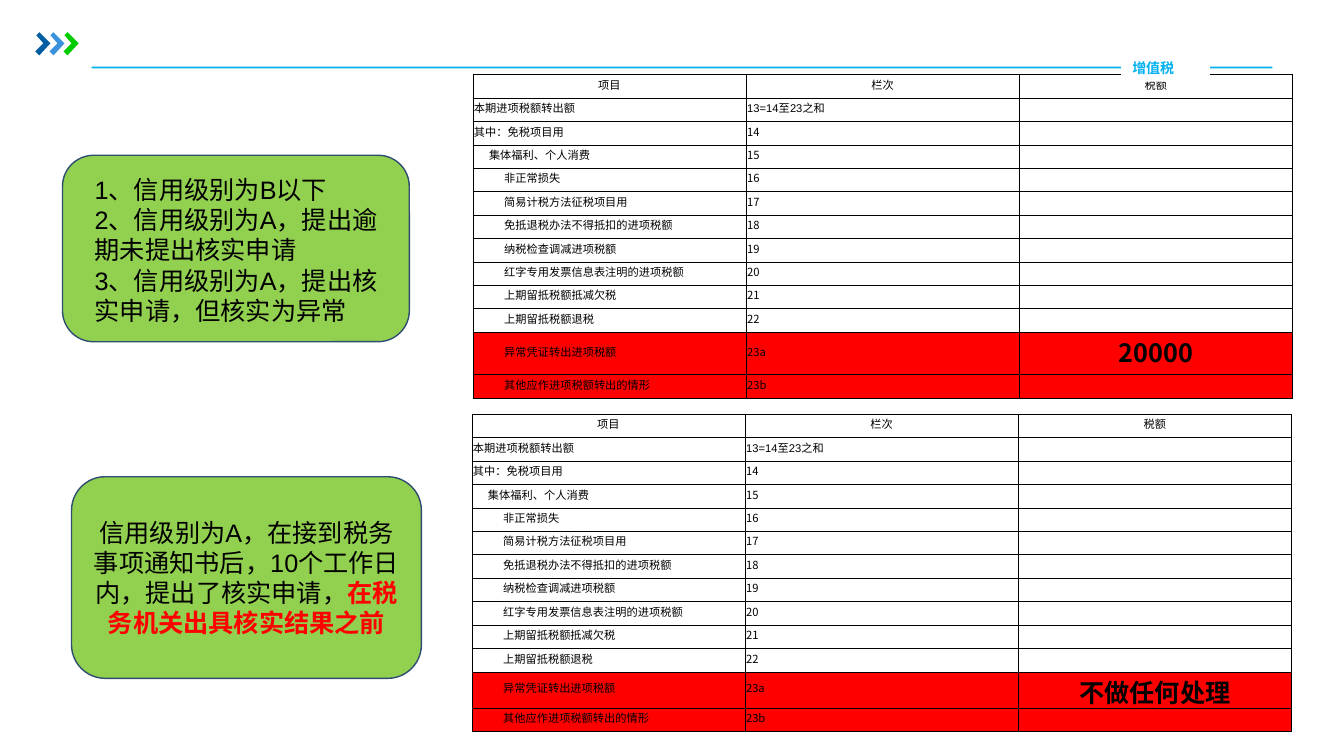
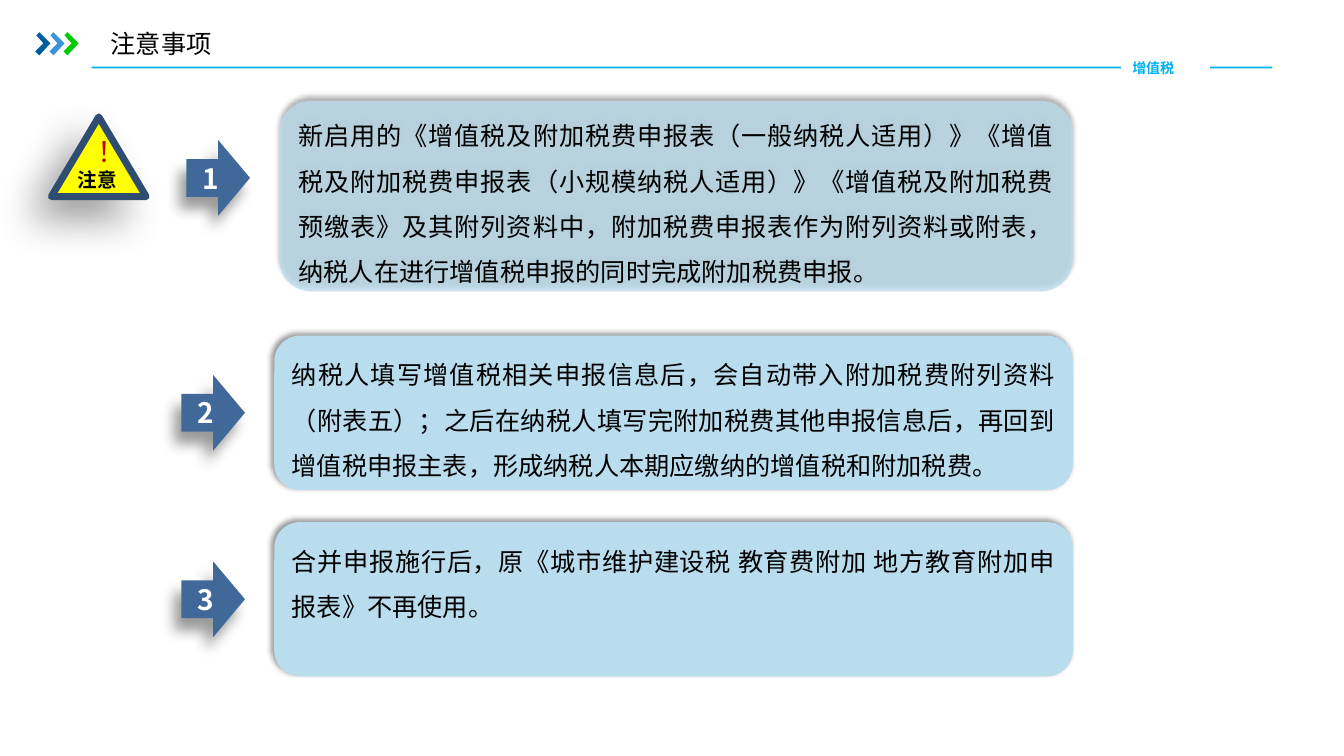
from lxml import etree
from pptx import Presentation
from pptx.dml.color import RGBColor
from pptx.enum import shapes, text
from pptx.oxml.ns import qn
from pptx.util import Inches, Pt

COLORS = {
    "black": "000000", "white": "FFFFFF", "red": "FF0000", "dark_red": "C00000",
    "yellow": "FFFF00", "green": "92D050", "outline": "2F4D70", "sky": "00B0F0",
    "arrow": "406898", "panel": "BADDEE",
    "chevron1": "005DA2", "chevron2": "3992DB", "chevron3": "00CC00",
}
SANS, LATIN, MARK = "Noto Sans CJK SC", "Arial", "Noto Sans CJK JP"
SHAPE = shapes.MSO_SHAPE
ALIGN = text.PP_ALIGN
MIDDLE = text.MSO_ANCHOR.MIDDLE

CHEVRON = [(0.01, 0.03), (0.04, 0), (0.15, 0.11), (0.04, 0.23), (0, 0.19), (0.08, 0.11)]
HEADINGS = ["项目", "栏次", "税额"]
ENTRIES = [
    (0, "本期进项税额转出额", "13=14至23之和"),
    (0, "其中：免税项目用", "14"),
    (1, "集体福利、个人消费", "15"),
    (2, "非正常损失", "16"),
    (2, "简易计税方法征税项目用", "17"),
    (2, "免抵退税办法不得抵扣的进项税额", "18"),
    (2, "纳税检查调减进项税额", "19"),
    (2, "红字专用发票信息表注明的进项税额", "20"),
    (2, "上期留抵税额抵减欠税", "21"),
    (2, "上期留抵税额退税", "22"),
    (2, "异常凭证转出进项税额", "23a"),
    (2, "其他应作进项税额转出的情形", "23b"),
]
RATING_CASES = [
    "1、信用级别为B以下",
    "2、信用级别为A，提出逾期未提出核实申请",
    "3、信用级别为A，提出核实申请，但核实为异常",
]
PENDING_CASE = [
    ("信用级别为A，在接到税务事项通知书后，10个工作日内，提出了核实申请，", "black", False),
    ("在税务机关出具核实结果之前", "red", True),
]
NOTES = [
    "新启用的《增值税及附加税费申报表（一般纳税人适用）》《增值税及附加税费申报表（小规模纳税人适用）》"
    "《增值税及附加税费预缴表》及其附列资料中，附加税费申报表作为附列资料或附表，"
    "纳税人在进行增值税申报的同时完成附加税费申报。",
    "纳税人填写增值税相关申报信息后，会自动带入附加税费附列资料（附表五）；"
    "之后在纳税人填写完附加税费其他申报信息后，再回到增值税申报主表，"
    "形成纳税人本期应缴纳的增值税和附加税费。",
    "合并申报施行后，原《城市维护建设税 教育费附加 地方教育附加申报表》不再使用。",
]


def rgb(name):
    """Return the named colour."""
    return RGBColor.from_string(COLORS[name])


def style_run(r, size, color="black", bold=False, font=SANS, asian=SANS):
    """Format one run, including its East Asian font."""
    r.font.size, r.font.bold, r.font.name = Pt(size), bold, font
    r.font.color.rgb = rgb(color)
    etree.SubElement(r.font._element, qn("a:ea"), typeface=asian)


def write(tf, lines, size, align=ALIGN.LEFT, spacing=None, **look):
    """Fill a text frame with uniformly formatted paragraphs."""
    tf.text = "\n".join(lines)
    for p in tf.paragraphs:
        p.alignment = align
        if spacing:
            p.line_spacing = spacing
        for r in p.runs:
            style_run(r, size, **look)


def add_box(slide, kind, box, fill, line=None, width=1):
    """Add a flat preset shape that wraps its text."""
    sp = slide.shapes.add_shape(kind, *map(Inches, box))
    sp.shadow.inherit = False
    sp.fill.solid()
    sp.fill.fore_color.rgb = rgb(fill)
    if line:
        sp.line.color.rgb = rgb(line)
        sp.line.width = Pt(width)
    else:
        sp.line.fill.background()
    sp.text_frame.word_wrap = True
    return sp


def add_label(slide, box, lines, size, wrap=True, **look):
    """Add a text box."""
    tf = slide.shapes.add_textbox(*map(Inches, box)).text_frame
    tf.word_wrap = wrap
    write(tf, lines, size, **look)


def set_alpha(color, percent):
    """Make an XML colour translucent."""
    etree.SubElement(color, qn("a:alpha"), val=str(percent * 1000))


def cast_shadow(sp, blur, dist, angle):
    """Give a shape a soft black outer shadow."""
    effects = sp._element.spPr.find(qn("a:effectLst"))
    shadow = etree.SubElement(
        effects, qn("a:outerShdw"), blurRad=str(Pt(blur)), dist=str(Pt(dist)),
        dir=str(angle * 60000), algn="ctr", rotWithShape="0")
    set_alpha(etree.SubElement(shadow, qn("a:srgbClr"), val=COLORS["black"]), 40)


def add_header(slide):
    """Draw the chevrons, the rule and the topic tag."""
    for i in range(3):
        points = [(Inches(0.35 + 0.14 * i + x), Inches(0.32 + y)) for x, y in CHEVRON]
        builder = slide.shapes.build_freeform(*points[0])
        builder.add_line_segments(points[1:], close=True)
        sp = builder.convert_to_shape()
        sp.shadow.inherit = False
        sp.fill.solid()
        sp.fill.fore_color.rgb = rgb(f"chevron{i + 1}")
        sp.line.fill.background()
    add_box(slide, SHAPE.RECTANGLE, (0.91, 0.66, 11.71, 0.02), "sky")
    tag = add_box(slide, SHAPE.RECTANGLE, (11.12, 0.53, 0.88, 0.28), "white")
    tf = tag.text_frame
    tf.margin_left = tf.margin_right = Inches(0.11)
    tf.margin_top = tf.margin_bottom = Inches(0.06)
    write(tf, ["增值税"], 10, color="sky", bold=True)


def format_cell(cell, marked):
    """Set the margins, fill and thin borders of a table cell."""
    cell.margin_left = cell.margin_right = cell.margin_top = Inches(0.01)
    cell.margin_bottom = Inches(0.05)
    cell.vertical_anchor = MIDDLE
    if marked:
        cell.fill.solid()
        cell.fill.fore_color.rgb = rgb("red")
    else:
        cell.fill.background()
    tc_pr = cell._tc.get_or_add_tcPr()
    for i, side in enumerate("LRTB"):
        ln = etree.Element(qn(f"a:ln{side}"), w=str(Pt(0.5)))
        solid = etree.SubElement(ln, qn("a:solidFill"))
        etree.SubElement(solid, qn("a:srgbClr"), val=COLORS["black"])
        tc_pr.insert(i, ln)


def add_tax_table(slide, box, outcome):
    """Add the input tax transfer table with its outcome in row 23a."""
    rows = [(0, *HEADINGS)]
    rows += [(*e, outcome if e[2] == "23a" else "") for e in ENTRIES]
    table = slide.shapes.add_table(len(rows), 3, *map(Inches, box)).table
    table.first_row = table.horz_banding = False
    for column in table.columns:
        column.width = Inches(box[2] / 3)
    for i, (level, *values) in enumerate(rows):
        table.rows[i].height = Inches(box[3] / len(rows))
        for j, value in enumerate(values):
            cell = table.cell(i, j)
            format_cell(cell, values[1].startswith("23"))
            big = value == outcome
            write(cell.text_frame, [value], 18 if big else 8, bold=big,
                  align=ALIGN.CENTER if i == 0 or big else ALIGN.LEFT,
                  font=LATIN if i < 2 else SANS)
            p = cell.text_frame.paragraphs[0]
            if not value:
                etree.SubElement(p._p, qn("a:endParaRPr"), sz="800")
            if j == 0 and level:
                p._p.get_or_add_pPr().set("marL", str(Inches(0.15 * level)))


def add_warning(slide, x, y):
    """Draw the warning triangle with its two labels."""
    sign = add_box(slide, SHAPE.FLOWCHART_EXTRACT, (x, y, 0.94, 0.79), "yellow", "outline", 5)
    etree.SubElement(sign.line._get_or_add_ln(), qn("a:round"))
    cast_shadow(sign, 30, 19, 135)
    add_label(slide, (x + 0.29, y + 0.13, 0.42, 0.44), ["！"], 20,
              color="dark_red", font=MARK, asian=MARK)
    add_label(slide, (x + 0.16, y + 0.46, 0.59, 0.34), ["注意"], 14, wrap=False, bold=True)


def add_note(slide, number, box, note, angle=225, alpha=100, bottom=0.05):
    """Draw a numbered arrow and the note panel it points to."""
    x, y = box[:2]
    arrow = add_box(slide, SHAPE.RIGHT_ARROW, (x - 0.92, y + 0.39, 0.63, 0.75), "arrow")
    cast_shadow(arrow, 10, 10, 120)
    write(arrow.text_frame, [str(number)], 20, ALIGN.CENTER, color="white", bold=True)
    panel = add_box(slide, SHAPE.ROUNDED_RECTANGLE, box, "panel")
    cast_shadow(panel, 4, 3, angle)
    if alpha < 100:
        set_alpha(panel._element.spPr.find(qn("a:solidFill"))[0], alpha)
    panel.text_frame.margin_bottom = Inches(bottom)
    write(panel.text_frame, [note], 18, ALIGN.JUSTIFY, 1.5)


def build_cases(slide):
    """Build the slide that compares two rating cases."""
    add_box(slide, SHAPE.ROUNDED_RECTANGLE, (0.62, 1.54, 3.44, 1.85), "green", "outline")
    add_tax_table(slide, (4.69, 0.74, 8.13, 3.02), "20000")
    add_label(slide, (0.84, 1.68, 3.05, 1.61), RATING_CASES, 18, font=LATIN)
    add_header(slide)
    add_tax_table(slide, (4.68, 4.11, 8.13, 3.02), "不做任何处理")
    sp = add_box(slide, SHAPE.ROUNDED_RECTANGLE, (0.71, 4.73, 3.47, 2), "green", "outline")
    p = sp.text_frame.paragraphs[0]
    p.alignment = ALIGN.CENTER
    for words, color, bold in PENDING_CASE:
        r = p.add_run()
        r.text = words
        style_run(r, 18, color, bold, LATIN)


def build_notes(slide):
    """Build the slide of numbered filing notes."""
    add_header(slide)
    add_label(slide, (1, 0.23, 1.2, 0.4), ["注意事项"], 18, wrap=False)
    add_warning(slide, 0.51, 1.16)
    add_note(slide, 1, (2.77, 1, 7.87, 1.89), NOTES[0], angle=270, alpha=74)
    add_note(slide, 2, (2.72, 3.33, 7.92, 1.53), NOTES[1])
    add_note(slide, 3, (2.72, 5.18, 7.92, 1.53), NOTES[2], bottom=0.5)


def main():
    """Build and save the presentation."""
    prs = Presentation()
    prs.slide_width, prs.slide_height = Inches(13.33), Inches(7.5)
    for build in (build_cases, build_notes):
        build(prs.slides.add_slide(prs.slide_layouts[6]))
    prs.save("out.pptx")


if __name__ == "__main__":
    main()
